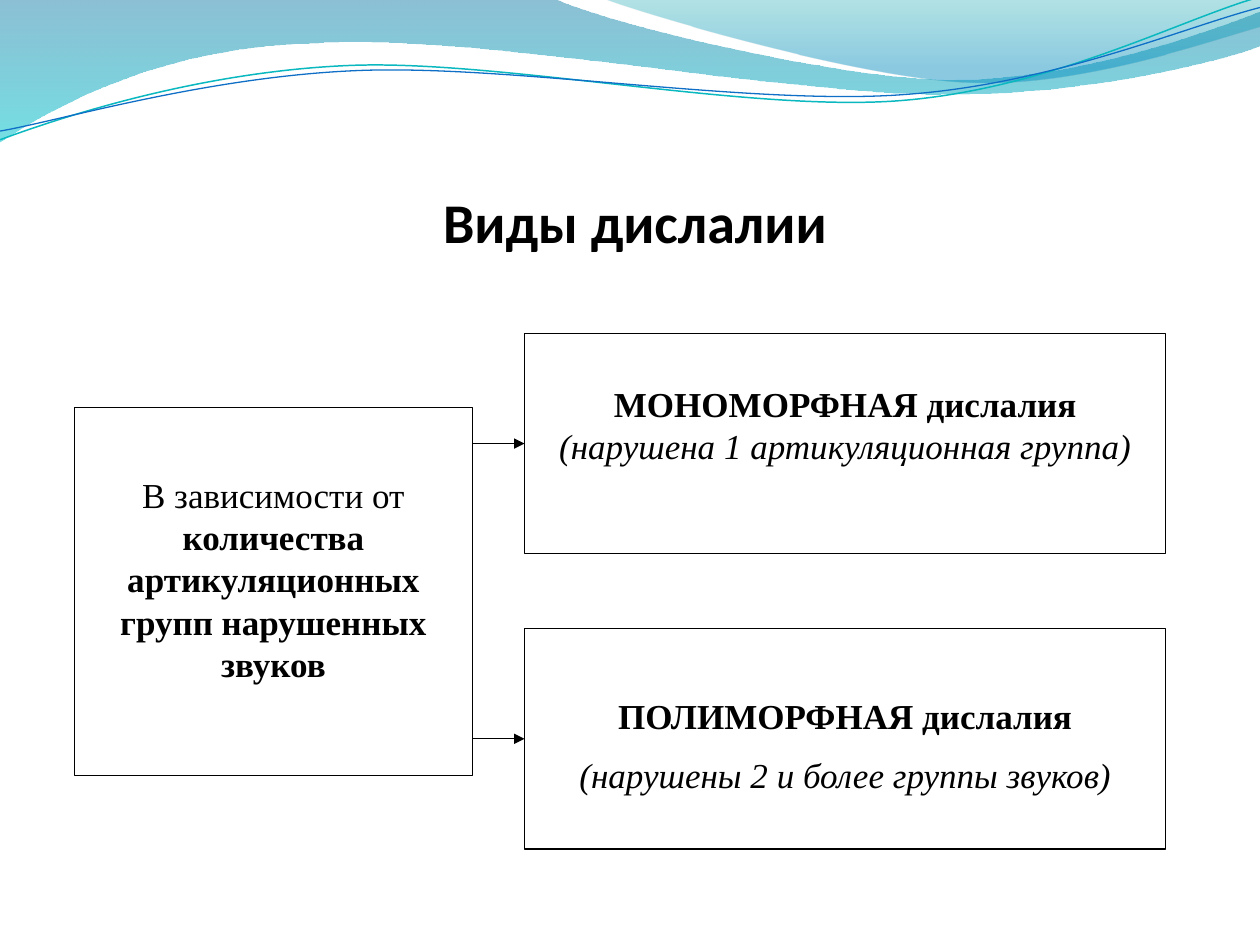
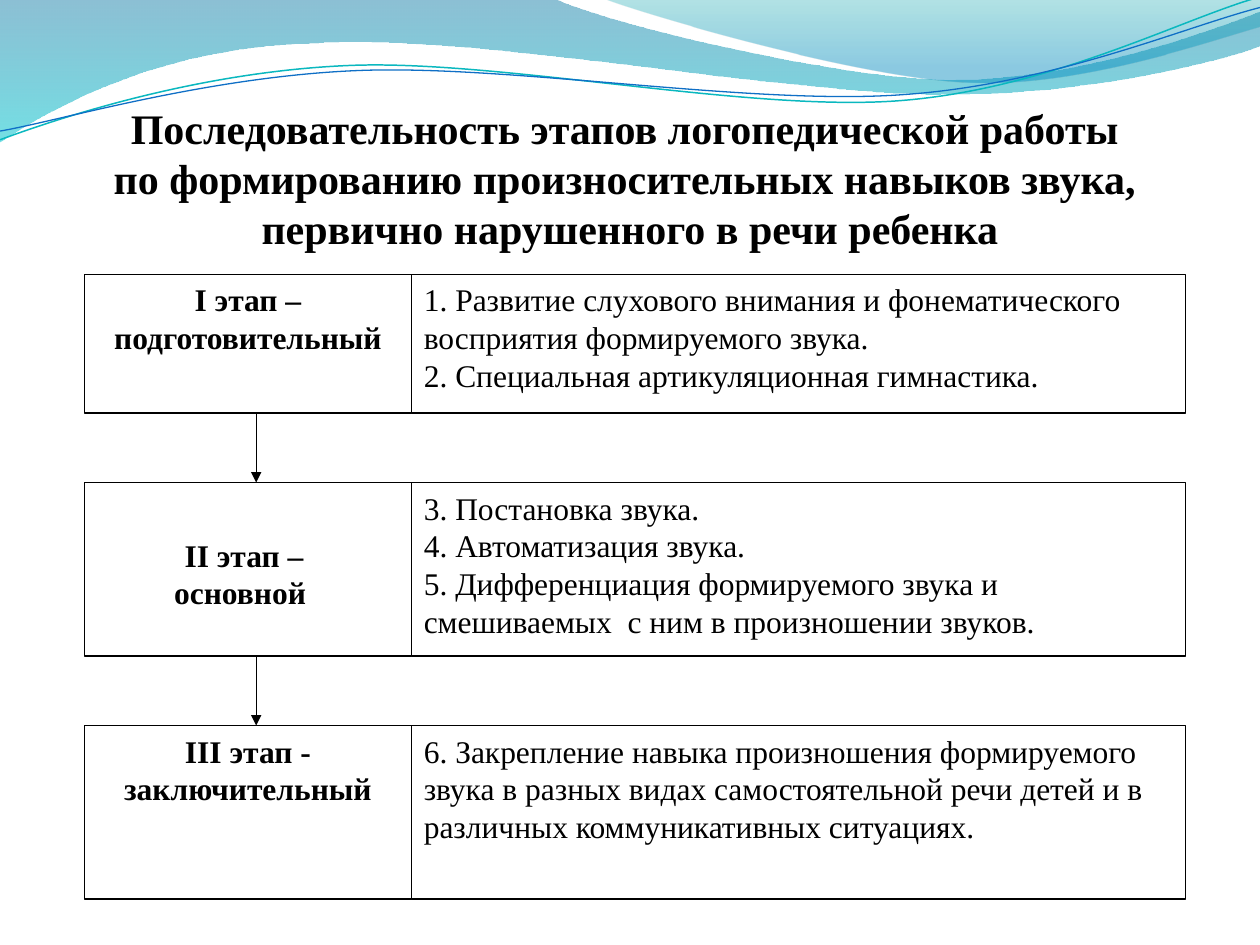
"""Build two slides on dyslalia: its kinds and the stages of speech therapy."""
from lxml import etree
from pptx import Presentation
from pptx.dml.color import RGBColor
from pptx.enum import shapes, text
from pptx.oxml.ns import qn
from pptx.util import Pt

COLORS = {
    "ink": "000000", "paper": "FFFFFF",
    "deep": "0074A1", "cyan": "00C6CF", "teal": "00A1A9", "sky": "008BBF",
    "teal_line": "0AB8BF", "blue_line": "0F6FC6",
}
RGB = {name: RGBColor.from_string(value) for name, value in COLORS.items()}
SERIF = "Times New Roman"
CENTER, LEFT = text.PP_ALIGN.CENTER, text.PP_ALIGN.LEFT


def write(p, content, size=20, font=SERIF, bold=False, italic=False):
    for i, line in enumerate(content.split("\n")):
        if i:
            p.add_line_break()
            br = p._p.findall(qn("a:br"))[-1]
            etree.SubElement(br, qn("a:rPr"), sz=str(size * 100))
        r = p.add_run()
        r.text = line
        r.font.size, r.font.name = Pt(size), font
        r.font.bold, r.font.italic = bold, italic
        r.font.color.rgb = RGB["ink"]


prs = Presentation()
prs.slide_width, prs.slide_height = Pt(720), Pt(540)
layout = prs.slide_layouts[5]
slides = [prs.slides.add_slide(layout) for _ in range(2)]

waves = [
    dict(start=(0, 0), stops=[("deep", 0, 45), ("cyan", 1, 55)], segments=[
        (316.8, -0.7),
        (342.7, 12.2, 478.1, 45.4, 545.8, 45.4),
        (614.2, 45.4, 689.8, 18.7, 720, 6.5),
        (720.7, 25.9),
        (707.8, 31.7, 626.4, 54.7, 537.1, 54),
        (447.8, 54, 275, 20.2, 185, 24.5),
        (92.9, 25.9, 33.1, 59.8, -0.7, 81.4)]),
    dict(start=(344.9, -0.7), stops=[("teal", 0, 30), ("sky", 0.8, 45)], segments=[
        (366.5, 7.9, 491, 44.6, 553.7, 46.8),
        (616.3, 49.7, 691.9, 23, 720, 15.1),
        (720, 0)]),
    dict(start=(-1.4, 62.9), line=("teal_line", 0.85), segments=[
        (33.8, 51.7, 114.1, 29.4, 199.8, 29.9),
        (284.8, 30.3, 425.9, 67.3, 512.5, 64.8),
        (599.1, 62.4, 676.5, 25.7, 720.2, 15.6)]),
    dict(start=(-1.1, 57.9), line=("blue_line", 0.75), segments=[
        (32.9, 53.7, 118.3, 32.5, 204.1, 33),
        (290.6, 33.4, 428.9, 63.8, 515.5, 61.4),
        (601.4, 59.6, 678.4, 30.1, 721.4, 21.3)]),
]
for n, wave in enumerate(waves):
    segments = wave["segments"]
    builder = slides[0].shapes.build_freeform(*map(Pt, wave["start"]))
    builder.add_line_segments([tuple(map(Pt, seg[-2:])) for seg in segments],
                              close="stops" in wave)
    sp = builder.convert_to_shape()
    sp.name = f"Wave {n + 1}"
    sp.shadow.inherit = False
    for node, seg in zip(list(sp.element.iter(qn("a:lnTo"))), segments):
        if len(seg) == 6:
            node.getparent().replace(node, curve := etree.Element(qn("a:cubicBezTo")))
            for x, y in zip(seg[::2], seg[1::2]):
                etree.SubElement(curve, qn("a:pt"),
                                 x=str(Pt(x) - sp.left), y=str(Pt(y) - sp.top))
    if "stops" in wave:
        sp.line.fill.background()
        sp.fill.gradient()
        sp.fill.gradient_angle = 270
        for stop, (color, position, _) in zip(sp.fill.gradient_stops, wave["stops"]):
            stop.color.rgb, stop.position = RGB[color], position
        for clr, (_, _, alpha) in zip(sp.element.spPr.iter(qn("a:srgbClr")), wave["stops"]):
            etree.SubElement(clr, qn("a:alpha"), val=str(alpha * 1000))
    else:
        color, width = wave["line"]
        sp.fill.background()
        sp.line.color.rgb, sp.line.width = RGB[color], Pt(width)
        sp.rotation = 357.3
    sp.element.nvSpPr.cNvPr.set("id", str(100 + n))
    layout.shapes.element.insert(2 + n, sp.element)

titles = [
    ("Виды дислалии", 36, 55.5, 654, dict(size=32, font="Calibri")),
    ("Последовательность этапов логопедической работы \n"
     "по формированию произносительных навыков звука, \n"
     "первично нарушенного в речи ребенка", 0, 54.7, 720, dict(size=24)),
]
for s, (content, left, top, width, fmt) in zip(slides, titles):
    sp = s.shapes.title
    sp.left, sp.top, sp.width, sp.height = Pt(left), Pt(top), Pt(width), Pt(90)
    tf = sp.text_frame
    tf.word_wrap, tf.auto_size = True, text.MSO_AUTO_SIZE.NONE
    tf.vertical_anchor = text.MSO_ANCHOR.BOTTOM
    tf.margin_left = tf.margin_right = tf.margin_bottom = 0
    tf.margin_top = Pt(3.6)
    tf.paragraphs[0].alignment = CENTER
    write(tf.paragraphs[0], content, bold=True, **fmt)

BOLD, ITALIC = dict(bold=True), dict(italic=True)
boxes, arrows = [], []

cause_x, cause_w, kind_x, kind_w, kind_h = 42.5, 227.5, 299.7, 366.5, 126
boxes.append((slides[0], (cause_x, 232.8, cause_w, 210.2), 38, 0, CENTER, [
    [("В зависимости от ", {}),
     ("количества артикуляционных групп нарушенных звуков", BOLD)]]))
kinds = [
    (190.5, 28, 0, "МОНОМОРФНАЯ дислалия", "(нарушена 1 артикуляционная группа)"),
    (359.2, 37.6, 10, "ПОЛИМОРФНАЯ дислалия", "(нарушены 2 и более группы звуков)"),
]
for top, inset, after, kind, meaning in kinds:
    boxes.append((slides[0], (kind_x, top, kind_w, kind_h), inset, after, CENTER,
                  [[(kind, BOLD)], [(meaning, ITALIC)]]))
    middle = top + kind_h / 2
    arrows.append((slides[0], cause_x + cause_w, middle, kind_x, middle))

stage_x, stage_w, task_w, gap, arrow_x = 48.3, 186.8, 442.5, 39.7, 146.4
stages = [
    (79.3, 3.6, ["I этап – подготовительный"],
     ["1. Развитие слухового внимания и фонематического восприятия формируемого звука.",
      "2. Специальная артикуляционная гимнастика."]),
    (99.2, 30.4, ["II этап – ", "основной  "],
     ["3. Постановка звука.", "4. Автоматизация звука.",
      "5. Дифференциация формируемого звука и смешиваемых  с ним в произношении звуков."]),
    (99.2, 3.6, ["III этап - заключительный"],
     ["6. Закрепление навыка произношения формируемого звука в разных видах "
      "самостоятельной речи детей и в различных коммуникативных ситуациях."]),
]
top = 156.7
for i, (height, inset, stage, tasks) in enumerate(stages):
    if i:
        arrows.append((slides[1], arrow_x, top - gap, arrow_x, top))
    boxes.append((slides[1], (stage_x, top, stage_w, height), inset, 0, CENTER,
                  [[(line, dict(size=18, bold=True))] for line in stage]))
    boxes.append((slides[1], (stage_x + stage_w, top, task_w, height), 3.6, 0, LEFT,
                  [[(line, dict(size=18))] for line in tasks]))
    top += height + gap

for s, frame, inset, after, align, paragraphs in boxes:
    sp = s.shapes.add_shape(shapes.MSO_SHAPE.RECTANGLE, *map(Pt, frame))
    sp.shadow.inherit = False
    sp.fill.solid()
    sp.fill.fore_color.rgb = RGB["paper"]
    sp.line.color.rgb, sp.line.width = RGB["ink"], Pt(0.75)
    tf = sp.text_frame
    tf.word_wrap, tf.vertical_anchor = True, text.MSO_ANCHOR.TOP
    tf.margin_top = Pt(inset)
    for i, runs in enumerate(paragraphs):
        p = tf.add_paragraph() if i else tf.paragraphs[0]
        p.alignment, p.space_after = align, Pt(after)
        for content, fmt in runs:
            write(p, content, **fmt)

for s, *ends in arrows:
    sp = s.shapes.add_connector(shapes.MSO_CONNECTOR.STRAIGHT, *map(Pt, ends))
    sp.line.color.rgb, sp.line.width = RGB["ink"], Pt(0.75)
    spPr = sp.element.spPr
    etree.SubElement(spPr.find(qn("a:ln")), qn("a:tailEnd"), type="triangle")
    etree.SubElement(spPr, qn("a:effectLst"))

prs.save("out.pptx")
